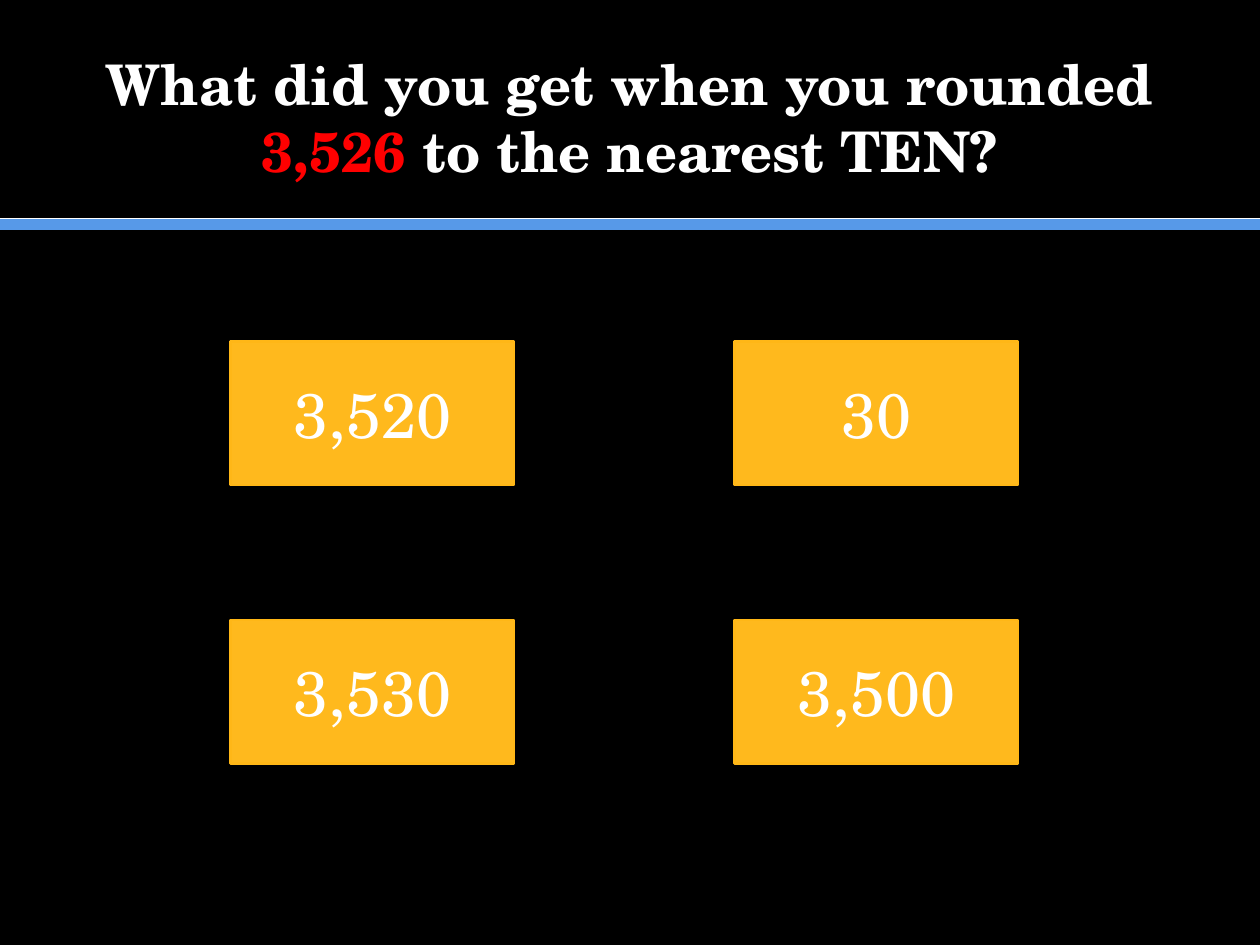
from pptx import Presentation
from pptx.dml.color import RGBColor
from pptx.enum.shapes import MSO_CONNECTOR, MSO_SHAPE
from pptx.enum.text import MSO_ANCHOR, PP_ALIGN
from pptx.oxml.ns import qn
from pptx.util import Inches, Pt
from lxml.etree import SubElement

THEME = {
    "font": "TeX Gyre Schola",
    "back": RGBColor.from_string("000000"),
    "white": RGBColor.from_string("FFFFFF"),
    "red": RGBColor.from_string("FF0000"),
    "blue": RGBColor.from_string("5799E8"),
    "gold": RGBColor.from_string("FFB91D"),
    "edge": RGBColor.from_string("FFB717"),
    "title": Pt(32),
    "answer": Pt(36),
}


def write(shape, parts, size, bold):
    frame = shape.text_frame
    for name, value in {"word_wrap": True, "vertical_anchor": MSO_ANCHOR.MIDDLE}.items():
        setattr(frame, name, value)
    para = frame.paragraphs[0]
    para.alignment = PP_ALIGN.CENTER
    for text, color in parts:
        run = para.add_run()
        run.text = text
        look = {"name": THEME["font"], "size": THEME[size], "bold": bold}
        for name, value in look.items():
            setattr(run.font, name, value)
        run.font.color.rgb = THEME[color]


deck = Presentation()
for name, value in {"slide_width": Inches(10), "slide_height": Inches(7.5)}.items():
    setattr(deck, name, value)
slide = deck.slides.add_slide(deck.slide_layouts[6])
slide.background.fill.solid()
slide.background.fill.fore_color.rgb = THEME["back"]

for top, color, width in [(1.78, "blue", 7), (1.73, "white", 0.5)]:
    rule = slide.shapes.add_connector(
        MSO_CONNECTOR.STRAIGHT, Inches(0), Inches(top), Inches(10), Inches(top)
    )
    rule.line.color.rgb = THEME[color]
    rule.line.width = Pt(width)
    SubElement(rule.element.spPr, qn("a:effectLst"))

title = slide.shapes.add_textbox(Inches(0.5), Inches(0.3), Inches(9), Inches(1.25))
parts = [
    ("What did you get when you rounded ", "white"),
    ("3,526", "red"),
    (" to the nearest TEN?", "white"),
]
write(title, parts, "title", True)

grid = [("3,530", "3,520"), ("3,500", "30")]
for left, column in zip((1.83, 5.83), grid):
    for top, text in zip((4.92, 2.71), column):
        button = slide.shapes.add_shape(
            MSO_SHAPE.ACTION_BUTTON_CUSTOM,
            Inches(left), Inches(top), Inches(2.25), Inches(1.14),
        )
        button.shadow.inherit = False
        button.fill.solid()
        button.fill.fore_color.rgb = THEME["gold"]
        button.line.color.rgb = THEME["edge"]
        button.line.width = Pt(1.5)
        write(button, [(text, "white")], "answer", False)

deck.save("out.pptx")
